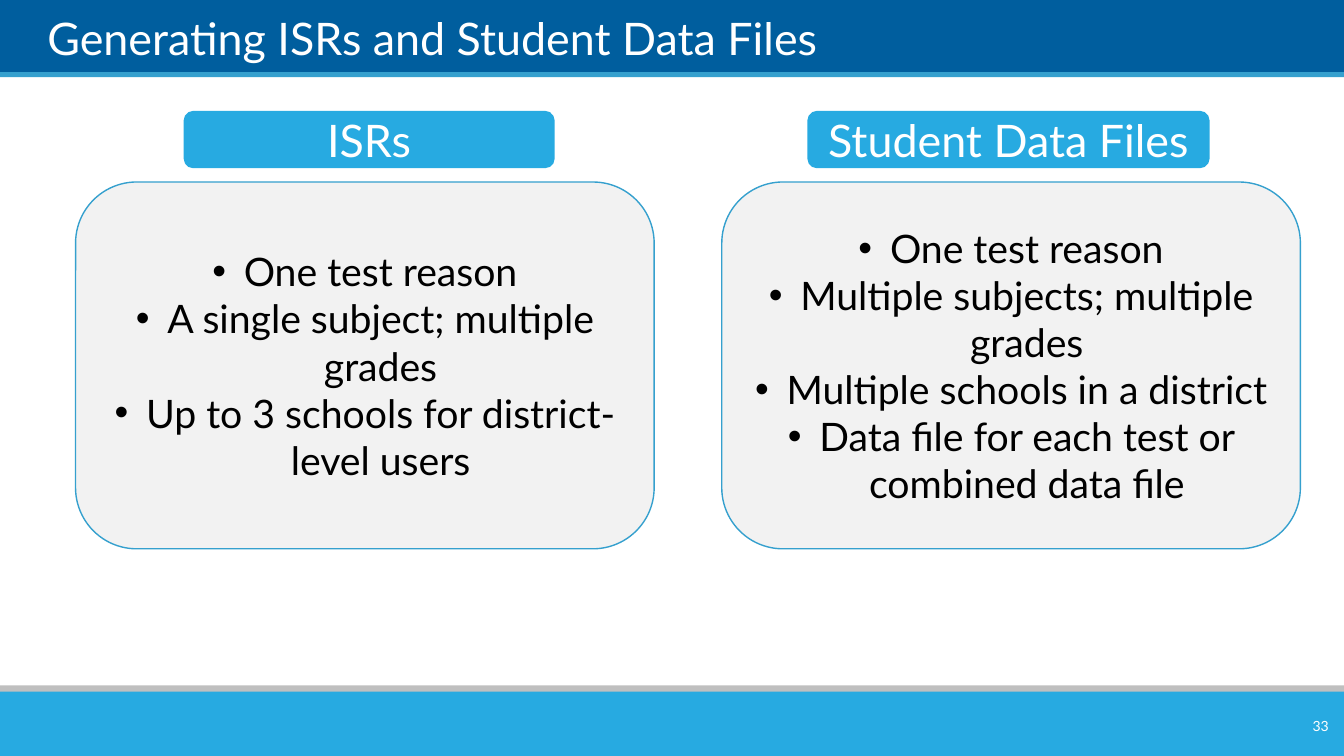
from pptx import Presentation
from pptx.dml.color import RGBColor
from pptx.enum.shapes import MSO_SHAPE as Shape
from pptx.enum.text import MSO_ANCHOR as Anchor, PP_ALIGN as Align
from pptx.oxml.ns import qn
from pptx.util import Pt
from lxml.etree import SubElement

# Content
TITLE = "Generating ISRs and Student Data Files"
PAGE_NUMBER = "33"
COLUMNS = [  # heading, heading left, heading width, points
    ("ISRs", 131.2, 265, [
        "One test reason",
        "A single subject; multiple grades",
        "Up to 3 schools for district-level users",
    ]),
    ("Student Data Files", 576.7, 287.3, [
        "One test reason",
        "Multiple subjects; multiple grades",
        "Multiple schools in a district",
        "Data file for each test or combined data file",
    ]),
]

# Colours
NAVY = RGBColor(0x00, 0x5E, 0x9E)
BLUE = RGBColor(0x35, 0xA0, 0xCE)
SKY = RGBColor(0x27, 0xAA, 0xE1)
SILVER = RGBColor(0xBF, 0xBF, 0xBF)
PALE = RGBColor(0xF2, 0xF2, 0xF2)
WHITE = RGBColor(0xFF, 0xFF, 0xFF)
BLACK = RGBColor(0x00, 0x00, 0x00)

# Layout, in points
WIDTH, HEIGHT = 960, 540
BANDS = [  # top, height, colour
    (-0.7, 54, NAVY), (51.6, 3.6, BLUE), (489.6, 10, SILVER), (494, 46, SKY),
]
PANEL_LEFT, PANEL_STEP = 54, 461.6
PANEL_TOP, PANEL_WIDTH, PANEL_HEIGHT = 130, 413.3, 262
HEADING_TOP, HEADING_HEIGHT = 79.2, 41
BULLET_INDENT = 22.5

# Text formats
HEADING_FONT = {"name": "Lato", "size": Pt(32)}
POINT_FONT = {"name": "Lato", "size": Pt(28)}
NUMBER_FONT = {"name": "Lato", "size": Pt(10)}
NO_MARGINS = {"margin_left": 0, "margin_top": 0, "margin_right": 0, "margin_bottom": 0}


def set_values(target, values):
    for name, value in values.items():
        setattr(target, name, value)


def add_box(slide, kind, box, fill, line=None):
    shape = slide.shapes.add_shape(kind, *map(Pt, box))
    shape.shadow.inherit = False
    shape.fill.solid()
    shape.fill.fore_color.rgb = fill
    if line is None:
        shape.line.fill.background()
    else:
        shape.line.color.rgb = line
        shape.line.width = Pt(1)
    return shape


def add_bullet(paragraph):
    properties = paragraph._p.get_or_add_pPr()
    properties.set("marL", str(Pt(BULLET_INDENT)))
    properties.set("indent", str(-Pt(BULLET_INDENT)))
    SubElement(properties, qn("a:buFont")).set("typeface", "Arial")
    SubElement(properties, qn("a:buChar")).set("char", "•")


def write(shape, lines, font, color, align, anchor=Anchor.MIDDLE, bullets=False):
    frame = shape.text_frame
    set_values(frame, {"word_wrap": True, "vertical_anchor": anchor})
    for index, line in enumerate(lines):
        paragraph = frame.add_paragraph() if index else frame.paragraphs[0]
        paragraph.text = line
        paragraph.alignment = align
        if bullets:
            add_bullet(paragraph)
        set_values(paragraph.font, font)
        paragraph.font.color.rgb = color


def main():
    deck = Presentation()
    set_values(deck, {"slide_width": Pt(WIDTH), "slide_height": Pt(HEIGHT)})
    slide = deck.slides.add_slide(deck.slide_layouts[6])

    # Header and footer bands
    for top, height, color in BANDS:
        add_box(slide, Shape.RECTANGLE, (0, top, WIDTH, height), color)

    # Title
    title = slide.shapes.add_textbox(Pt(33.8), Pt(5), Pt(867.6), Pt(41))
    set_values(title.text_frame, NO_MARGINS)
    write(title, [TITLE], HEADING_FONT, WHITE, Align.LEFT, Anchor.BOTTOM)

    # Columns: panel of points under a heading
    for index, (heading, heading_left, heading_width, points) in enumerate(COLUMNS):
        left = PANEL_LEFT + index * PANEL_STEP
        panel = add_box(slide, Shape.ROUNDED_RECTANGLE,
                        (left, PANEL_TOP, PANEL_WIDTH, PANEL_HEIGHT), PALE, BLUE)
        write(panel, points, POINT_FONT, BLACK, Align.CENTER, bullets=True)
        label = add_box(slide, Shape.ROUNDED_RECTANGLE,
                        (heading_left, HEADING_TOP, heading_width, HEADING_HEIGHT), SKY)
        write(label, [heading], HEADING_FONT, WHITE, Align.CENTER)

    # Page number
    number = slide.shapes.add_textbox(Pt(900.7), Pt(507.6), Pt(55.5), Pt(21.6))
    write(number, [PAGE_NUMBER], NUMBER_FONT, WHITE, Align.RIGHT)

    deck.save("out.pptx")


if __name__ == "__main__":
    main()
